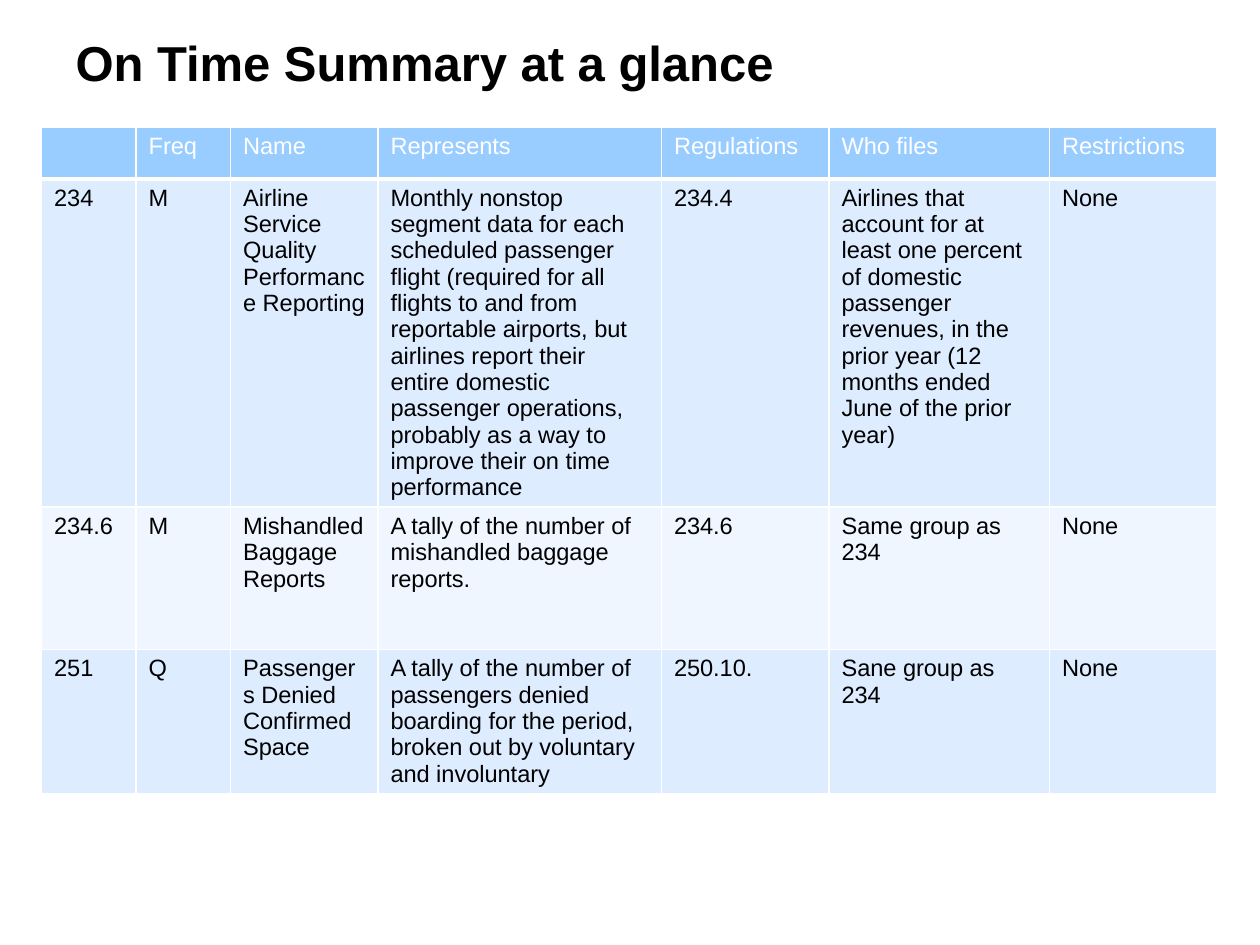
from lxml.etree import SubElement
from pptx import Presentation
from pptx.dml.color import RGBColor
from pptx.enum.text import MSO_ANCHOR, PP_ALIGN
from pptx.oxml.ns import qn
from pptx.util import Inches, Pt

BLACK = RGBColor(0x00, 0x00, 0x00)
WHITE = RGBColor(0xFF, 0xFF, 0xFF)
HEADER_BLUE = RGBColor(0x99, 0xCC, 0xFF)
BAND_BLUES = [RGBColor(0xDE, 0xEC, 0xFF), RGBColor(0xEF, 0xF6, 0xFF)]

COLUMN_WIDTHS = [0.75, 0.75, 1.17, 2.25, 1.33, 1.75, 1.33]
ROW_HEIGHTS = [0.41, 1.03, 1.13, 1.13]
REPORTS = [
    ["", "Freq", "Name", "Represents", "Regulations", "Who files", "Restrictions"],
    ["234", "M", "Airline Service Quality Performance Reporting",
     "Monthly nonstop segment data for each scheduled passenger flight (required for "
     "all flights to and from reportable airports, but airlines report their entire "
     "domestic passenger operations, probably as a way to improve their on time "
     "performance",
     "234.4",
     "Airlines that account for at least one percent of domestic passenger revenues, "
     "in the prior year (12 months ended June of the prior year)",
     "None"],
    ["234.6", "M", "Mishandled Baggage Reports",
     "A tally of the number of mishandled baggage reports.",
     "234.6", "Same group as 234", "None"],
    ["251", "Q", "Passengers Denied Confirmed Space",
     "A tally of the number of passengers denied boarding for the period, broken out "
     "by voluntary and involuntary",
     "250.10.", "Sane group as 234", "None"],
]


def write_text(frame, text, size, color=BLACK, bold=False):
    paragraph = frame.paragraphs[0]
    paragraph.alignment = PP_ALIGN.LEFT
    paragraph.font.size = Pt(size)
    if text:
        run = paragraph.add_run()
        run.text = text
        run.font.name = "Arial"
        run.font.size = Pt(size)
        run.font.bold = bold
        run.font.color.rgb = color


def set_borders(cell, bottom):
    properties = cell._tc.get_or_add_tcPr()
    for side, width in [("L", 1), ("R", 1), ("T", 1), ("B", bottom)]:
        border = SubElement(properties, qn(f"a:ln{side}"), w=str(Pt(width)))
        fill = SubElement(border, qn("a:solidFill"))
        SubElement(fill, qn("a:srgbClr"), val=str(WHITE))


def add_title(slide, text):
    title = slide.shapes.title
    title.left, title.top = Inches(0.5), Inches(0.17)
    title.width, title.height = Inches(9), Inches(0.65)
    title.text_frame.vertical_anchor = MSO_ANCHOR.MIDDLE
    write_text(title.text_frame, text, size=28, bold=True)


def add_report_table(slide):
    table = slide.shapes.add_table(
        len(REPORTS), len(COLUMN_WIDTHS), Inches(0.33), Inches(1.01),
        Inches(sum(COLUMN_WIDTHS)), Inches(sum(ROW_HEIGHTS))).table
    for column, width in zip(table.columns, COLUMN_WIDTHS):
        column.width = Inches(width)
    for index, (row, height, report) in enumerate(zip(table.rows, ROW_HEIGHTS, REPORTS)):
        row.height = Inches(height)
        is_header = index == 0
        for cell, text in zip(row.cells, report):
            set_borders(cell, bottom=3 if is_header else 1)
            cell.fill.solid()
            cell.fill.fore_color.rgb = HEADER_BLUE if is_header else BAND_BLUES[(index - 1) % 2]
            write_text(cell.text_frame, text, size=13.5, color=WHITE if is_header else BLACK)


def main():
    deck = Presentation()
    deck.slide_width, deck.slide_height = Inches(10), Inches(7.5)
    slide = deck.slides.add_slide(deck.slide_layouts[5])
    add_title(slide, "On Time Summary at a glance")
    add_report_table(slide)
    deck.save("out.pptx")


if __name__ == "__main__":
    main()
